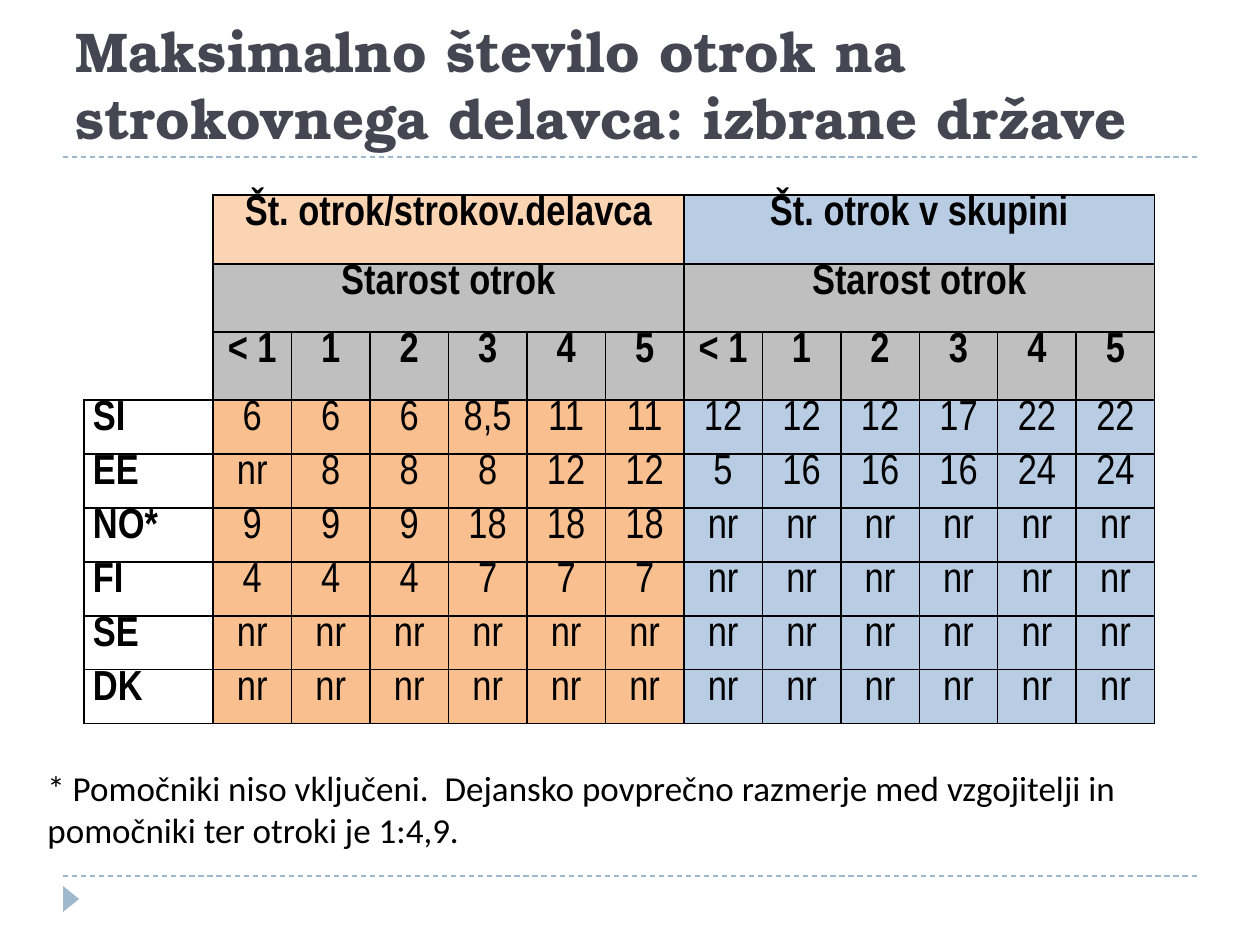
from pptx import Presentation
from pptx.dml.color import RGBColor
from pptx.enum.dml import MSO_LINE
from pptx.enum.shapes import MSO_CONNECTOR, MSO_SHAPE
from pptx.enum.text import MSO_ANCHOR, MSO_AUTO_SIZE, PP_ALIGN
from pptx.oxml.ns import qn
from pptx.util import Emu, Pt
from lxml.etree import SubElement

BLACK = RGBColor(0x00, 0x00, 0x00)
TITLE_GRAY = RGBColor(0x46, 0x46, 0x53)
ACCENT = RGBColor(0x9F, 0xB8, 0xCD)
PEACH = RGBColor(0xFB, 0xD4, 0xB4)
ORANGE = RGBColor(0xFA, 0xBF, 0x8F)
BLUE = RGBColor(0xB8, 0xCC, 0xE4)
GRAY = RGBColor(0xBF, 0xBF, 0xBF)

AGES = ["< 1", "1", "2", "3", "4", "5"]
COUNTRIES = {
    "SI": "6 6 6 8,5 11 11 12 12 12 17 22 22",
    "EE": "nr 8 8 8 12 12 5 16 16 16 24 24",
    "NO*": "9 9 9 18 18 18 nr nr nr nr nr nr",
    "FI": "4 4 4 7 7 7 nr nr nr nr nr nr",
    "SE": "nr nr nr nr nr nr nr nr nr nr nr nr",
    "DK": "nr nr nr nr nr nr nr nr nr nr nr nr",
}


def px(length):
    return Emu(round(length * 914400 / 126))


class SlideBuilder:
    table_font = "Arial Narrow"
    note_font = "Calibri"
    title_font = "TeX Gyre Bonum"

    def __init__(self, page):
        self.page = page

    def style(self, paragraph, font, size, color, bold=False):
        paragraph.font.name = font
        paragraph.font.size = Pt(size)
        paragraph.font.color.rgb = color
        paragraph.font.bold = bold

    def rule(self, left, right, top):
        line = self.page.shapes.add_connector(
            MSO_CONNECTOR.STRAIGHT, px(left), px(top), px(right), px(top))
        line.line.color.rgb = ACCENT
        line.line.width = Pt(0.75)
        line.line.dash_style = MSO_LINE.DASH
        SubElement(line._element.spPr, qn("a:effectLst"))

    def marker(self, left, top, width, height):
        shape = self.page.shapes.add_shape(
            MSO_SHAPE.ISOSCELES_TRIANGLE, px(left), px(top), px(width), px(height))
        shape.rotation = 90
        shape.shadow.inherit = False
        shape.fill.solid()
        shape.fill.fore_color.rgb = ACCENT
        shape.line.fill.background()

    def title(self, text, left, top, width, height):
        box = self.page.shapes.title
        box.left, box.top, box.width, box.height = map(px, (left, top, width, height))
        frame = box.text_frame
        frame.text = text
        frame.auto_size = MSO_AUTO_SIZE.NONE
        frame.vertical_anchor = MSO_ANCHOR.BOTTOM
        paragraph = frame.paragraphs[0]
        paragraph.alignment = PP_ALIGN.LEFT
        self.style(paragraph, self.title_font, 32, TITLE_GRAY, True)

    def note(self, text, left, top, width, height):
        box = self.page.shapes.add_textbox(px(left), px(top), px(width), px(height))
        frame = box.text_frame
        frame.word_wrap = True
        frame.auto_size = MSO_AUTO_SIZE.SHAPE_TO_FIT_TEXT
        frame.text = text
        self.style(frame.paragraphs[0], self.note_font, 20, BLACK)

    def table(self, left, top, label_width, values_width, heights):
        columns = 2 * len(AGES) + 1
        grid = self.page.shapes.add_table(
            len(heights), columns, px(left), px(top),
            px(label_width + values_width), px(sum(heights))).table
        grid.first_row = grid.horz_banding = False
        grid.columns[0].width = px(label_width)
        for column in range(1, columns):
            grid.columns[column].width = px(values_width) // (columns - 1)
        for row, height in enumerate(heights):
            grid.rows[row].height = px(height)
        return grid

    def borders(self, cell, sides):
        properties = cell._tc.get_or_add_tcPr()
        for index, side in enumerate("LRTB"):
            edge = properties.makeelement(qn(f"a:ln{side}"), {"w": str(Pt(1))})
            properties.insert(index, edge)
            if side in sides:
                solid = SubElement(edge, qn("a:solidFill"))
                SubElement(solid, qn("a:srgbClr"), val=str(BLACK))
            else:
                SubElement(edge, qn("a:noFill"))

    def cell(self, cell, text="", fill=None, bold=False, align=PP_ALIGN.CENTER,
             inset=3, sides="LRTB"):
        if fill is None:
            cell.fill.background()
        else:
            cell.fill.solid()
            cell.fill.fore_color.rgb = fill
        self.borders(cell, sides)
        cell.margin_left = cell.margin_right = px(inset)
        cell.margin_top = cell.margin_bottom = 0
        cell.text = text
        paragraph = cell.text_frame.paragraphs[0]
        paragraph.alignment = align
        paragraph.space_after = Pt(2)
        self.style(paragraph, self.table_font, 24, BLACK, bold)


def fill_table(builder, grid):
    for row, sides in enumerate(("R", "R", "RB")):
        builder.cell(grid.cell(row, 0), sides=sides)
    groups = [("Št. otrok/strokov.delavca", PEACH, ORANGE),
              ("Št. otrok v skupini", BLUE, BLUE)]
    size = len(AGES)
    for group, (heading, head_fill, value_fill) in enumerate(groups):
        first = 1 + group * size
        for row, (text, fill) in enumerate([(heading, head_fill), ("Starost otrok", GRAY)]):
            for column in range(first, first + size):
                builder.cell(grid.cell(row, column), text if column == first else "", fill, True)
            grid.cell(row, first).merge(grid.cell(row, first + size - 1))
        for offset, age in enumerate(AGES):
            column = first + offset
            builder.cell(grid.cell(2, column), age, GRAY, True)
            for row, values in enumerate(COUNTRIES.values(), 3):
                builder.cell(grid.cell(row, column), values.split()[column - 1], value_fill)
    for row, country in enumerate(COUNTRIES, 3):
        builder.cell(grid.cell(row, 0), country, bold=True, align=PP_ALIGN.LEFT, inset=9)


def main():
    deck = Presentation()
    deck.slide_width, deck.slide_height = px(1260), px(945)
    builder = SlideBuilder(deck.slides.add_slide(deck.slide_layouts[5]))
    for top in (876, 157):
        builder.rule(63, 1197, top)
    builder.marker(58, 891, 26, 16)
    builder.title("Maksimalno število otrok na strokovnega delavca: izbrane države",
                  63, 21, 1134, 136)
    grid = builder.table(84, 195, 129, 942, [69, 68, 68] + [54] * len(COUNTRIES))
    fill_table(builder, grid)
    builder.note("* Pomočniki niso vključeni.  Dejansko povprečno razmerje med vzgojitelji in "
                 "pomočniki ter otroki je 1:4,9.", 35, 760, 1171, 97)
    deck.save("out.pptx")


if __name__ == "__main__":
    main()
